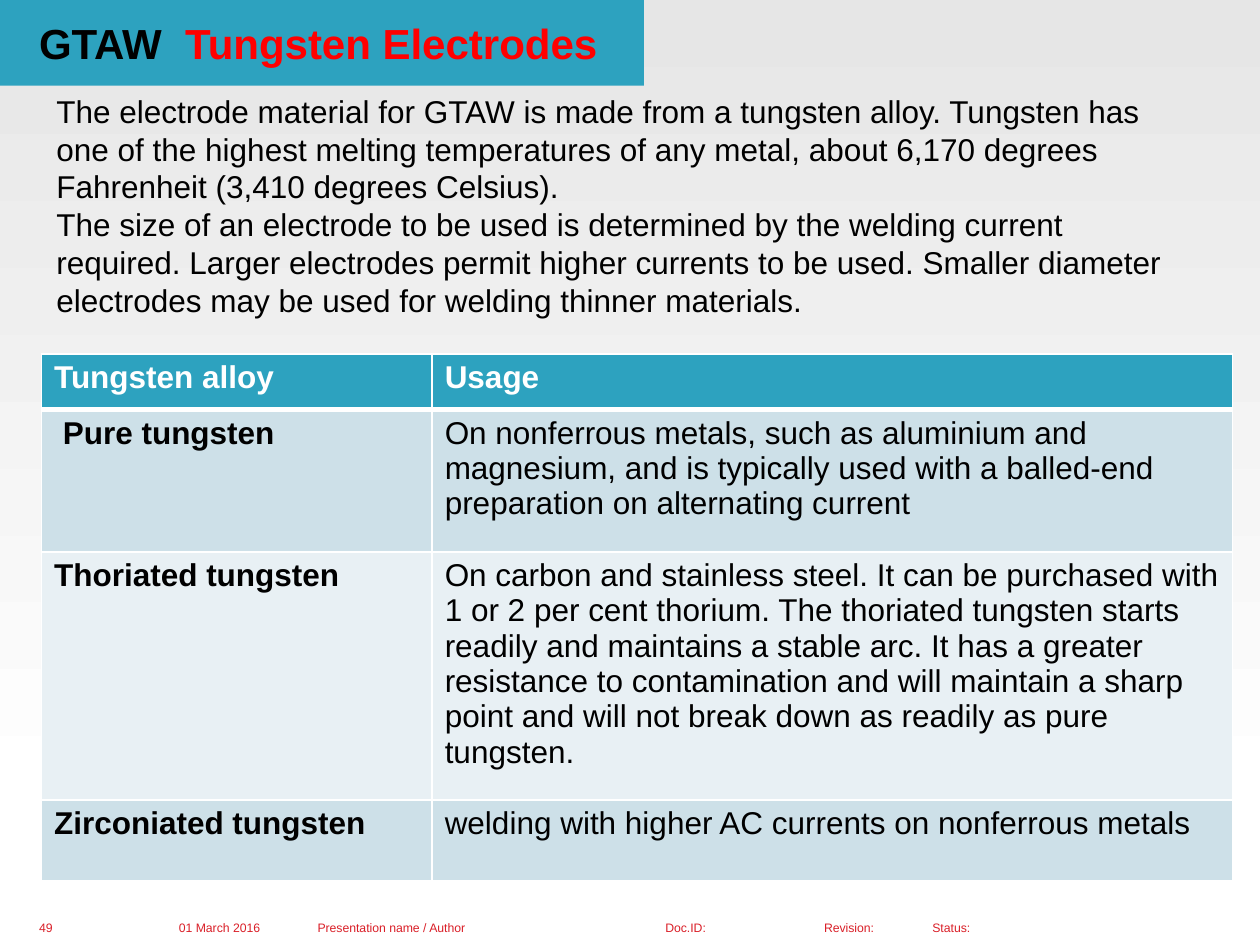
from pptx import Presentation
from pptx.dml.color import RGBColor as RGB
from pptx.enum.text import MSO_ANCHOR as ANCHOR, MSO_AUTO_SIZE as AUTO, PP_ALIGN as ALIGN
from pptx.oxml.ns import qn
from pptx.util import Inches, Pt
from lxml import etree

COLORS = {
    "teal": "2DA2BF", "black": "000000", "red": "FF0000", "footer": "DA1F28",
    "white": "FFFFFF", "grey": "E6E6E6", "band": "CDE0E8", "band_light": "E8F0F4",
}
BODY = [
    "The electrode material for GTAW is made from a tungsten alloy. Tungsten has one of the "
    "highest melting temperatures of any metal, about 6,170 degrees Fahrenheit "
    "(3,410 degrees Celsius).",
    "The size of an electrode to be used is determined by the welding current required. "
    "Larger electrodes permit higher currents to be used. Smaller diameter electrodes may be "
    "used for welding thinner materials.",
]
ALLOYS = [
    ("Tungsten alloy", "Usage"),
    (" Pure tungsten",
     "On nonferrous metals, such as aluminium and magnesium, and is typically used with a "
     "balled-end preparation on alternating current"),
    ("Thoriated tungsten",
     "On carbon and stainless steel. It can be purchased with 1 or 2 per cent thorium. "
     "The thoriated tungsten starts readily and maintains a stable arc. It has a greater "
     "resistance to contamination and will maintain a sharp point and will not break down "
     "as readily as pure tungsten."),
    ("Zirconiated tungsten", "welding with higher AC currents on nonferrous metals"),
]
COL_WIDTHS = [3.1, 6.35]
ROW_HEIGHTS = [0.44, 1.13, 1.97, 0.64]
# text, left, width, wrap
FOOTER = [
    ("49", 0.27, 0.39, True),
    ("01 March 2016", 1.38, 1.1, True),
    ("Presentation name / Author", 2.48, 2.68, True),
    ("Doc.ID:", 5.24, 0.39, False),
    ("Revision:", 6.5, 0.47, False),
    ("Status:", 7.36, 0.39, False),
]


def rgb(name):
    return RGB.from_string(COLORS[name])


def add_run(p, text, size, color, bold=False):
    r = p.add_run()
    r.text = text
    for key, value in {"name": "Arial", "size": Pt(size), "bold": bold}.items():
        setattr(r.font, key, value)
    r.font.color.rgb = rgb(color)


def set_frame(tf, margins, **values):
    for side, inset in zip(("left", "top", "right", "bottom"), margins):
        setattr(tf, f"margin_{side}", Inches(inset))
    for key, value in values.items():
        setattr(tf, key, value)


def set_border(cell, side, width):
    ln = etree.SubElement(cell._tc.get_or_add_tcPr(), qn(f"a:{side}"), w=str(Pt(width)))
    fill = etree.SubElement(ln, qn("a:solidFill"))
    etree.SubElement(fill, qn("a:srgbClr"), val=COLORS["white"])


def set_background(s):
    fill = s.background.fill
    fill.gradient()
    fill.gradient_angle = 270
    for stop, position, color in zip(fill.gradient_stops, (0, 0.85), ("grey", "white")):
        stop.position = position
        stop.color.rgb = rgb(color)


def add_title(s, left, top, width, height):
    sp = s.shapes.title
    box = {"left": left, "top": top, "width": width, "height": height}
    for key, value in box.items():
        setattr(sp, key, Inches(value))
    sp.fill.solid()
    sp.fill.fore_color.rgb = rgb("teal")
    # The fixed size keeps the band clear of the text below
    set_frame(sp.text_frame, (0.31, 0.14, 0.1, 0.1), word_wrap=True,
              vertical_anchor=ANCHOR.TOP, auto_size=AUTO.NONE)
    p = sp.text_frame.paragraphs[0]
    p.alignment = ALIGN.LEFT
    add_run(p, "GTAW  ", 24, "black", True)
    add_run(p, "Tungsten Electrodes", 24, "red", True)


def add_body(s, left, top, width, height):
    tf = s.shapes.add_textbox(*map(Inches, (left, top, width, height))).text_frame
    set_frame(tf, (0.1, 0.05, 0.1, 0.05), word_wrap=True)
    for i, text in enumerate(BODY):
        p = tf.add_paragraph() if i else tf.paragraphs[0]
        add_run(p, text, 18, "black")


def add_alloy_table(s, left, top, width, height):
    box = map(Inches, (left, top, width, height))
    table = s.shapes.add_table(len(ALLOYS), len(COL_WIDTHS), *box).table
    for col, col_width in zip(table.columns, COL_WIDTHS):
        col.width = Inches(col_width)
    for i, (row, texts) in enumerate(zip(table.rows, ALLOYS)):
        row.height = Inches(ROW_HEIGHTS[i])
        header = i == 0
        fill = "teal" if header else "band" if i % 2 else "band_light"
        for j, (cell, text) in enumerate(zip(row.cells, texts)):
            for side in ("lnL", "lnR", "lnT", "lnB"):
                heavy = (i, side) in ((0, "lnB"), (1, "lnT"))
                set_border(cell, side, 3 if heavy else 1)
            cell.fill.solid()
            cell.fill.fore_color.rgb = rgb(fill)
            p = cell.text_frame.paragraphs[0]
            add_run(p, text, 18, "white" if header else "black", header or j == 0)


def add_footer(s, top, height):
    for text, left, width, wrap in FOOTER:
        tf = s.shapes.add_textbox(*map(Inches, (left, top, width, height))).text_frame
        # The narrow labels need the full width of their boxes
        right = 0.04 if wrap else 0
        set_frame(tf, (0.04, 0.04, right, 0.06), word_wrap=wrap,
                  vertical_anchor=ANCHOR.MIDDLE)
        add_run(tf.paragraphs[0], text, 7, "footer")


def main():
    prs = Presentation()
    prs.slide_width, prs.slide_height = Inches(10), Inches(7.5)
    s = prs.slides.add_slide(prs.slide_layouts[5])
    set_background(s)
    # Heading and explanation
    add_title(s, 0, 0, 5.11, 0.68)
    add_body(s, 0.35, 0.68, 9.06, 2.83)
    # Alloys and their usage
    add_alloy_table(s, 0.33, 2.81, sum(COL_WIDTHS), sum(ROW_HEIGHTS))
    # Footer line
    add_footer(s, 7.29, 0.16)
    prs.save("out.pptx")


if __name__ == "__main__":
    main()
